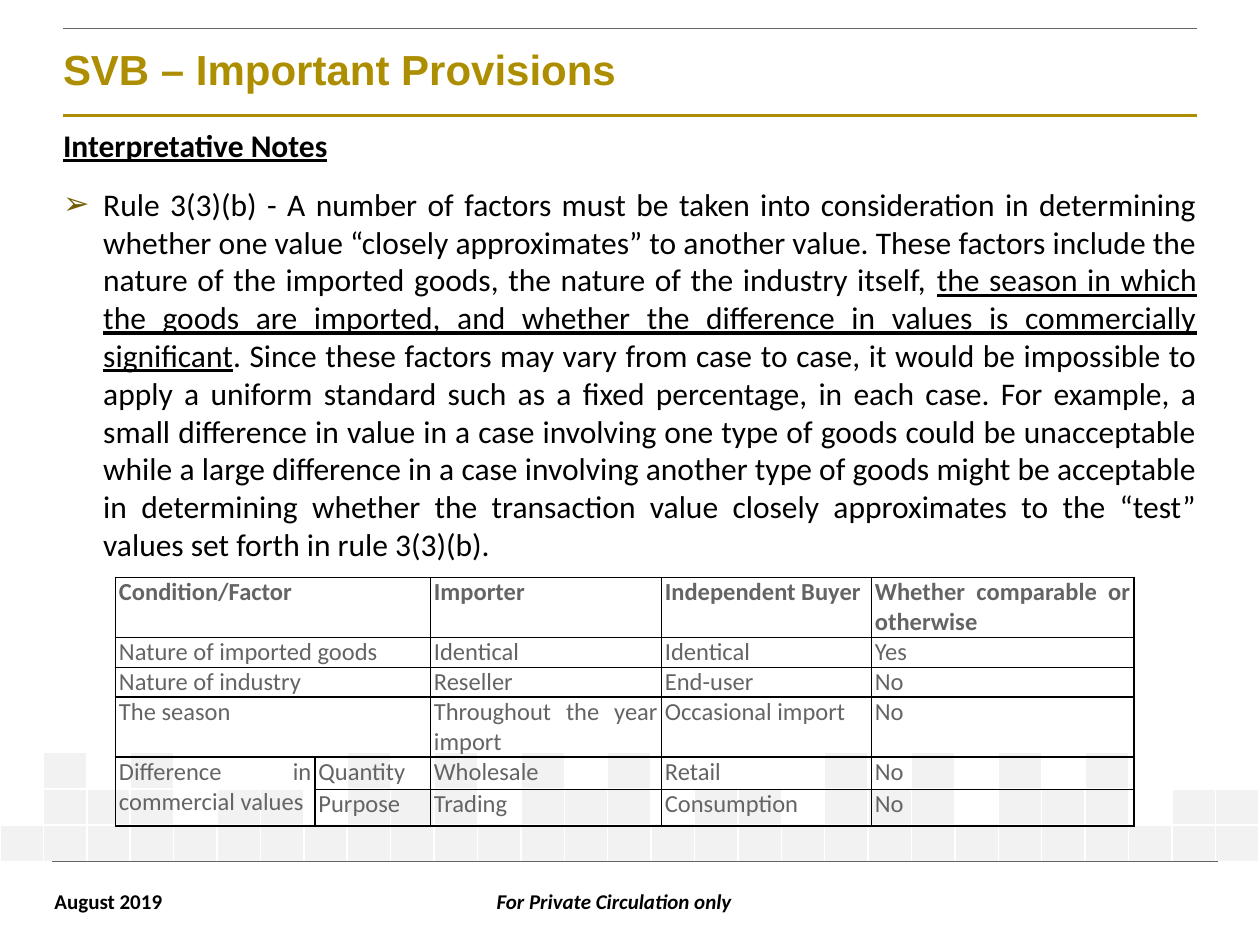
from lxml.etree import SubElement
from pptx import Presentation
from pptx.dml.color import RGBColor
from pptx.enum.shapes import MSO_CONNECTOR as Connector
from pptx.enum.text import MSO_ANCHOR as Anchor, MSO_AUTO_SIZE as AutoSize, PP_ALIGN as Align
from pptx.oxml.ns import qn
from pptx.util import Pt

GOLD = RGBColor(0xAD, 0x8E, 0x00)
BULLET_GOLD = RGBColor(0x74, 0x5F, 0x00)
GREY = RGBColor(0x64, 0x64, 0x64)
BLOCK_GREY = RGBColor(0xF2, 0xF2, 0xF2)
BLACK = RGBColor(0, 0, 0)
WHITE = RGBColor(0xFF, 0xFF, 0xFF)

# Content
TITLE = "SVB – Important Provisions"
HEADING = "Interpretative Notes"
RULE_TEXT = [  # (text, underlined)
    ("Rule 3(3)(b) - A number of factors must be taken into consideration in determining "
     "whether one value “closely approximates” to another value. These factors include the "
     "nature of the imported goods, the nature of the industry itself, ", False),
    ("the season in which the goods are imported, and whether the difference in values is "
     "commercially significant", True),
    (". Since these factors may vary from case to case, it would be impossible to apply a "
     "uniform standard such as a fixed percentage, in each case. For example, a small "
     "difference in value in a case involving one type of goods could be unacceptable while "
     "a large difference in a case involving another type of goods might be acceptable in "
     "determining whether the transaction value closely approximates to the “test” values "
     "set forth in rule 3(3)(b).", False),
]
FACTORS = [
    ("Condition/Factor", "", "Importer", "Independent Buyer", "Whether comparable or otherwise"),
    ("Nature of imported goods", "", "Identical", "Identical", "Yes"),
    ("Nature of industry", "", "Reseller", "End-user", "No"),
    ("The season", "", "Throughout the year import", "Occasional import", "No"),
    ("Difference in commercial values", "Quantity", "Wholesale", "Retail", "No"),
    ("", "Purpose", "Trading", "Consumption", "No"),
]
FACTOR_WIDTHS = [114, 66, 132, 120, 150]
FACTOR_HEIGHTS = [34.2, 17.1, 17.1, 34.2, 18.5, 21]
MERGES = [((row, 0), (row, 1)) for row in range(4)] + [((4, 0), (5, 0))]
BLOCKS = [  # "#" is a shaded block
    ".#.#....#.#.#.#....#.#.#.#...",
    ".###.##.###.###.##.###.###.##",
    "#" * 29,
]
RULES = [  # left, right, y, colour, weight
    (36, 684, 66, GOLD, 1.5),
    (36, 684, 16, GREY, 0.5),
    (30, 696, 492, GREY, 0.25),
]
FOOTERS = [  # text, left, width, alignment, italic, wrap
    ("August 2019", 24, 77, Align.LEFT, False, False),
    ("For Private Circulation only", 174, 354, Align.CENTER, True, True),
]


def set_font(font, name, size, color, bold=False, italic=False):
    font.name, font.size, font.bold, font.italic = name, Pt(size), bold, italic
    font.color.rgb = color


def set_margins(target, left, top, right, bottom):
    target.margin_left, target.margin_top = Pt(left), Pt(top)
    target.margin_right, target.margin_bottom = Pt(right), Pt(bottom)


def place(shape, left, top, width, height):
    shape.left, shape.top, shape.width, shape.height = Pt(left), Pt(top), Pt(width), Pt(height)


def add_grid(slide, left, top, widths, heights):
    grid = slide.shapes.add_table(len(heights), len(widths), Pt(left), Pt(top),
                                  Pt(sum(widths)), Pt(sum(heights))).table
    grid.first_row = grid.horz_banding = False
    for column, width in zip(grid.columns, widths):
        column.width = Pt(width)
    for row, height in zip(grid.rows, heights):
        row.height = Pt(height)
    return grid


def style_cell(cell, border, fill=None):
    properties = cell._tc.get_or_add_tcPr()
    for side in ("a:lnL", "a:lnR", "a:lnT", "a:lnB"):
        line = SubElement(properties, qn(side), w=str(Pt(1)))
        SubElement(SubElement(line, qn("a:solidFill")), qn("a:srgbClr"), val=str(border))
    if fill is None:
        cell.fill.background()
    else:
        cell.fill.solid()
        cell.fill.fore_color.rgb = fill


def set_bullet(paragraph, indent, char=None):
    properties = paragraph._p.get_or_add_pPr()
    properties.set("marL", str(Pt(indent)))
    properties.set("indent", str(-Pt(indent)))
    if char is None:
        SubElement(properties, qn("a:buNone"))
    else:
        color = SubElement(properties, qn("a:buClr"))
        SubElement(color, qn("a:srgbClr"), val=str(BULLET_GOLD))
        SubElement(properties, qn("a:buChar"), char=char)


def main():
    deck = Presentation()
    deck.slide_width, deck.slide_height = Pt(720), Pt(540)
    slide = deck.slides.add_slide(deck.slide_layouts[1])

    # Shaded blocks along the bottom
    columns = len(BLOCKS[0])
    blocks = add_grid(slide, 0, 430, [720 / columns] * columns, [20.8] * 3)
    for r, pattern in enumerate(BLOCKS):
        for c, mark in enumerate(pattern):
            cell = blocks.cell(r, c)
            style_cell(cell, WHITE, BLOCK_GREY if mark == "#" else None)
            set_margins(cell, 0, 0, 0, 0)
            SubElement(cell.text_frame.paragraphs[0]._p, qn("a:endParaRPr"), sz="800")

    # Rules
    for left, right, y, color, weight in RULES:
        rule = slide.shapes.add_connector(Connector.STRAIGHT, Pt(left), Pt(y), Pt(right), Pt(y))
        rule.line.color.rgb, rule.line.width = color, Pt(weight)
        SubElement(rule._element.spPr, qn("a:effectLst"))

    # Footer
    for text, left, width, align, italic, wrap in FOOTERS:
        frame = slide.shapes.add_textbox(Pt(left), Pt(504), Pt(width), Pt(21.8)).text_frame
        frame.word_wrap = wrap
        footer = frame.paragraphs[0]
        footer.text, footer.alignment = text, align
        set_font(footer.font, "Calibri", 12, BLACK, bold=True, italic=italic)

    # Title
    title = slide.shapes.title
    place(title, 36, 16, 648, 47.5)
    frame = title.text_frame
    frame.auto_size, frame.vertical_anchor = AutoSize.NONE, Anchor.MIDDLE
    set_margins(frame, 0, 3, 0, 0)
    heading = frame.paragraphs[0]
    heading.text, heading.alignment, heading.line_spacing = TITLE, Align.LEFT, 0.85
    set_font(heading.font, "Arial", 24, GOLD, bold=True)

    # Body
    body = slide.placeholders[1]
    place(body, 36, 72, 648, 414)
    frame = body.text_frame
    frame.auto_size = AutoSize.NONE
    set_margins(frame, 0, 0, 0, 0)
    notes = [(frame.paragraphs[0], [(HEADING, True)], None, 0, True),
             (frame.add_paragraph(), RULE_TEXT, "➢", 6, False)]
    for paragraph, parts, bullet, before, bold in notes:
        set_bullet(paragraph, 23, bullet)
        paragraph.alignment = Align.JUSTIFY
        paragraph.space_before, paragraph.space_after = Pt(before), Pt(6)
        set_font(paragraph.font, "Calibri", 18, BLACK, bold=bold)
        for text, underlined in parts:
            run = paragraph.add_run()
            run.text, run.font.underline = text, underlined

    # Comparison of factors
    factors = add_grid(slide, 66, 330, FACTOR_WIDTHS, FACTOR_HEIGHTS)
    for r, texts in enumerate(FACTORS):
        for c, text in enumerate(texts):
            cell = factors.cell(r, c)
            style_cell(cell, BLACK)
            set_margins(cell, 2, 0, 2, 0)
            entry = cell.text_frame.paragraphs[0]
            entry.text, entry.alignment = text, Align.JUSTIFY
            set_font(entry.font, "Calibri", 14, GREY, bold=r == 0)
    for start, end in MERGES:
        factors.cell(*start).merge(factors.cell(*end))

    deck.save("out.pptx")


if __name__ == "__main__":
    main()
